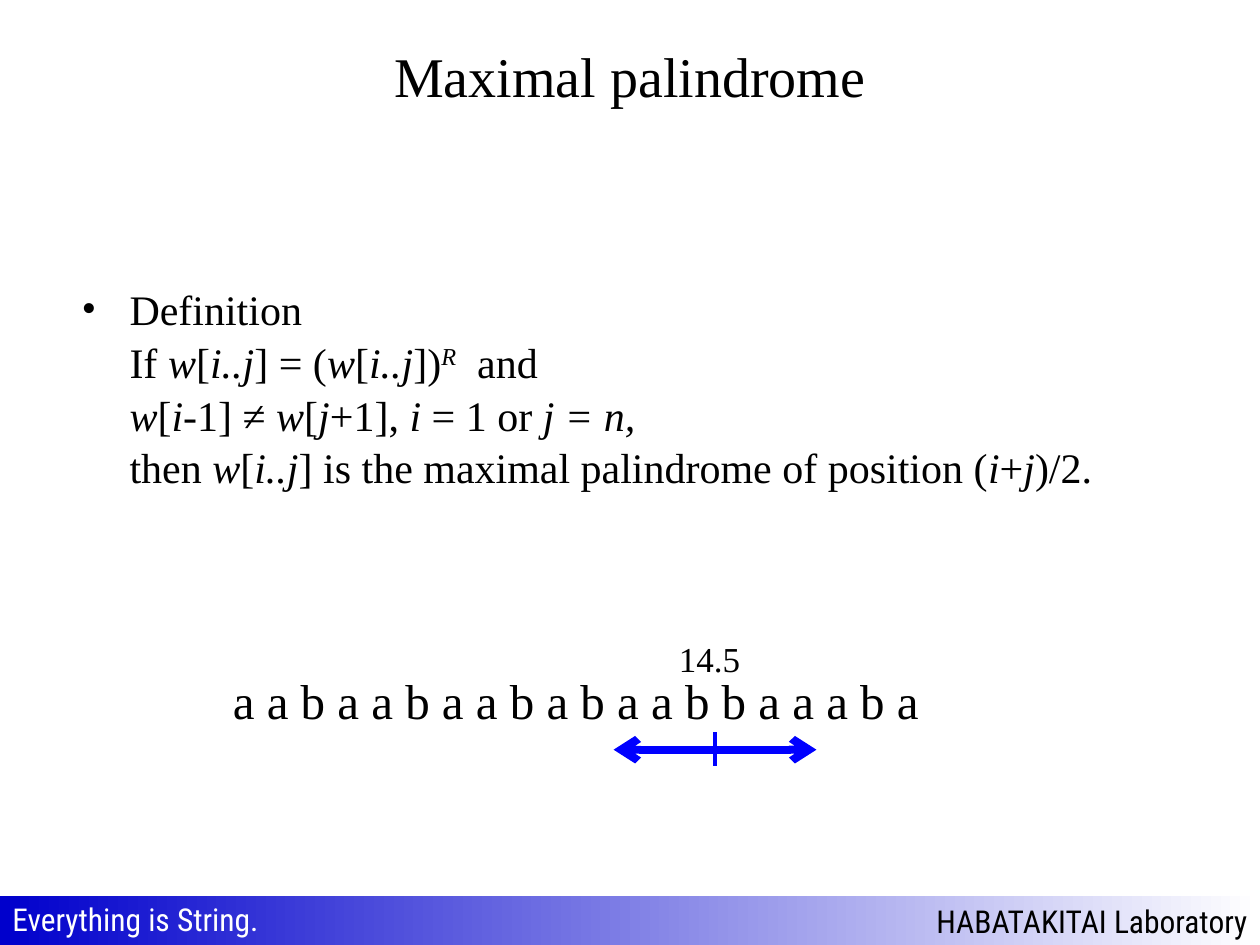
from lxml.etree import SubElement
from pptx import Presentation
from pptx.dml.color import RGBColor
from pptx.enum.shapes import MSO_CONNECTOR, MSO_SHAPE
from pptx.enum.text import MSO_ANCHOR as ANCHOR, PP_ALIGN as ALIGN
from pptx.oxml.ns import qn
from pptx.util import Inches, Pt

SERIF, SANS = "Times New Roman", "Roboto Condensed"
BLACK, WHITE, BLUE, NAVY = "000000", "FFFFFF", "0000FF", "0000CC"

# Asterisks switch italics on and off; carets enclose a superscript.
DEFINITION = [
    "Definition",
    "If *w*[*i..j*] = (*w*[*i..j*])*^R^*  and ",
    "*w*[*i*-1] ≠* w*[*j*+1], *i* = 1 or* j = n,*",
    "then *w*[*i..j*] is the maximal palindrome of position (*i*+*j*)/2.",
]


def color(hex_code):
    return RGBColor.from_string(hex_code)


def add_run(p, text, size, font=SERIF, hex_code=BLACK, italic=None):
    r = p.add_run()
    r.text = text
    r.font.size = Pt(size)
    r.font.name = font
    r.font.italic = italic
    r.font.color.rgb = color(hex_code)
    return r


def add_label(slide, text, box, size, font=SERIF, hex_code=BLACK):
    sp = slide.shapes.add_textbox(*map(Inches, box))
    sp.text_frame.word_wrap = False
    add_run(sp.text_frame.paragraphs[0], text, size, font, hex_code)


def add_line(slide, start, end, width, arrows=False):
    line = slide.shapes.add_connector(
        MSO_CONNECTOR.STRAIGHT, *map(Inches, start + end))
    line.line.color.rgb = color(BLUE)
    line.line.width = Pt(width)
    if arrows:
        ln = line.line._get_or_add_ln()
        for tag in ("a:headEnd", "a:tailEnd"):
            SubElement(ln, qn(tag), type="arrow")
    SubElement(line._element.spPr, qn("a:effectLst"))


def add_footer(slide):
    bar = slide.shapes.add_shape(
        MSO_SHAPE.RECTANGLE, 0, Inches(7.11), Inches(10), Inches(0.39))
    bar.shadow.inherit = False
    bar.line.fill.background()
    bar.fill.gradient()
    bar.fill.gradient_angle = 0
    for stop, position, shade in zip(bar.fill.gradient_stops, (0, 1), (NAVY, WHITE)):
        stop.position = position
        stop.color.rgb = color(shade)
    tf = bar.text_frame
    tf.word_wrap = False
    tf.vertical_anchor = ANCHOR.MIDDLE
    p = tf.paragraphs[0]
    p.alignment = ALIGN.RIGHT
    add_run(p, "HABATAKITAI Laboratory", 18, SANS)
    add_label(slide, "Everything is String.", (0, 7.09, 2.22, 0.4), 18, SANS, WHITE)


def add_title(slide, text):
    sp = slide.shapes.title
    sp.left, sp.top, sp.width, sp.height = map(Inches, (0.5, 0.13, 9, 0.93))
    sp.text_frame.vertical_anchor = ANCHOR.MIDDLE
    p = sp.text_frame.paragraphs[0]
    p.alignment = ALIGN.CENTER
    add_run(p, text, 32)


def add_definition(slide, lines):
    sp = slide.shapes.add_textbox(*map(Inches, (0.55, 2.18, 9.24, 4.53)))
    sp.text_frame.word_wrap = True
    p = sp.text_frame.paragraphs[0]
    p.line_spacing = 1.05
    pPr = p._p.get_or_add_pPr()
    pPr.set("marL", str(Inches(0.38)))
    pPr.set("indent", str(-Inches(0.38)))
    SubElement(pPr, qn("a:buFont"), typeface=SERIF)
    SubElement(pPr, qn("a:buChar"), char="•")
    for number, line in enumerate(lines):
        if number:
            p.add_line_break()
        for i, part in enumerate(line.split("*")):
            if part:
                r = add_run(p, part.strip("^"), 24, italic=i % 2 == 1)
                if part.startswith("^"):
                    r.font._element.set("baseline", "30000")


def add_example(slide):
    # Arrow spans the palindrome, with a tick at its centre
    left, right, y = 4.87, 6.48, 5.95
    center = (left + right) / 2
    add_line(slide, (left, y), (right, y), 4.5, arrows=True)
    add_line(slide, (center, 5.81), (center, 6.08), 2.25)
    add_label(slide, "14.5", (5.29, 5.01, 0.69, 0.44), 20)
    add_label(slide, " ".join("aabaabaababaabbaaaba"), (1.75, 5.27, 5.93, 0.57), 28)


def main():
    prs = Presentation()
    prs.slide_width, prs.slide_height = Inches(10), Inches(7.5)
    slide = prs.slides.add_slide(prs.slide_layouts[5])
    add_footer(slide)
    add_definition(slide, DEFINITION)
    add_title(slide, "Maximal palindrome")
    add_example(slide)
    prs.save("out.pptx")


if __name__ == "__main__":
    main()
